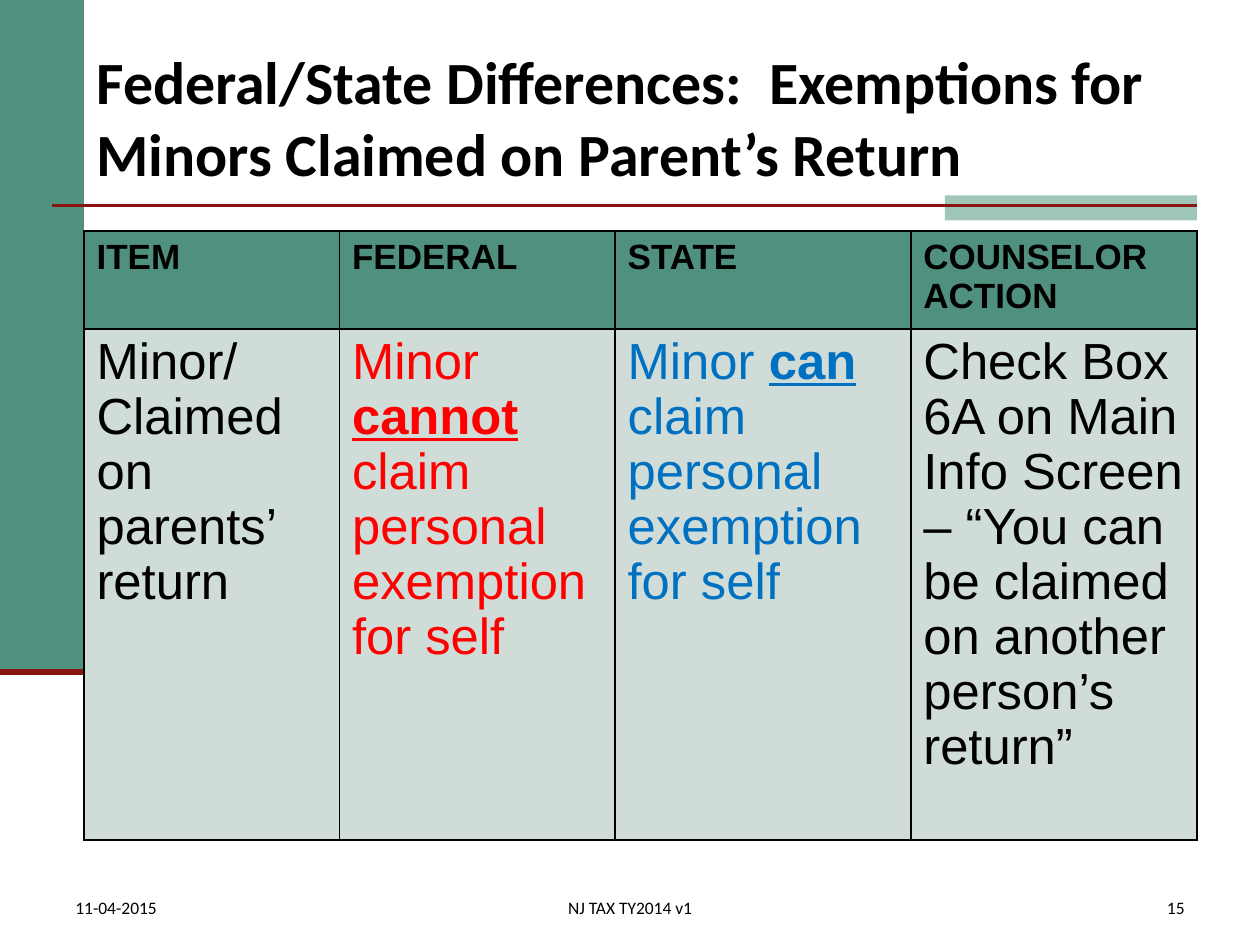
from dataclasses import dataclass

from lxml import etree
from pptx import Presentation
from pptx.dml.color import RGBColor
from pptx.enum import shapes, text
from pptx.oxml import ns
from pptx.util import Pt


@dataclass(frozen=True)
class Theme:
    green: str = "4F917E"
    mint: str = "A0C6BA"
    pale: str = "D0DCD8"
    maroon: str = "891411"
    black: str = "000000"
    red: str = "FF0000"
    blue: str = "0070C0"
    head: str = "Calibri"
    body: str = "Arial"
    title: float = 34.2
    label: float = 20
    cell: float = 29
    foot: float = 10


T = Theme()
ALIGN = text.PP_ALIGN
ANCHOR = text.MSO_ANCHOR
HEADS = ["ITEM", "FEDERAL", "STATE", "COUNSELOR ACTION"]
CLAIM = "claim personal exemption for self"
# Each cell: its colour, then paragraphs of (words, stressed) runs.
ANSWERS = [
    (T.black, [[("Minor/", False)], [("Claimed on parents’ return", False)]]),
    (T.red, [[("Minor ", False), ("cannot ", True), (CLAIM, False)]]),
    (T.blue, [[("Minor ", False), ("can ", True), (CLAIM, False)]]),
    (T.black, [[("Check Box 6A on Main Info Screen – “You can be claimed "
                 "on another person’s return”", False)]]),
]


def rgb(code):
    return RGBColor.from_string(code)


def add_run(para, words, size, face, color=T.black, bold=False, under=False):
    run = para.add_run()
    run.text = words
    font = run.font
    font.size, font.name = Pt(size), face
    font.bold, font.underline = bold, under
    font.color.rgb = rgb(color)


def place(shape, box):
    shape.left, shape.top, shape.width, shape.height = map(Pt, box)


def add_bar(slide, box, color):
    bar = slide.shapes.add_shape(shapes.MSO_SHAPE.RECTANGLE, *map(Pt, box))
    bar.shadow.inherit = False
    bar.fill.solid()
    bar.fill.fore_color.rgb = rgb(color)
    bar.line.fill.background()


def add_rule(slide, left, right, y, width):
    rule = slide.shapes.add_connector(
        shapes.MSO_CONNECTOR.STRAIGHT, Pt(left), Pt(y), Pt(right), Pt(y))
    rule.line.color.rgb = rgb(T.maroon)
    rule.line.width = Pt(width)
    etree.SubElement(rule._element.spPr, ns.qn("a:effectLst"))


def add_frame(slide, box):
    """Side band, accent bar and the two rules."""
    left, top, width, height = box
    band, end = left + 48, left + width - 36
    base = top + 384
    add_bar(slide, (left, top, 48, 384), T.green)
    add_bar(slide, (end - 144, top + 111.6, 144, 14.4), T.mint)
    add_rule(slide, left + 30, end, top + 117.6, 1.5)
    add_rule(slide, left, band, base, 3.5)


def add_title(slide, box):
    title = slide.shapes.title
    place(title, box)
    frame = title.text_frame
    frame.word_wrap = True
    frame.auto_size = text.MSO_AUTO_SIZE.NONE
    frame.vertical_anchor = ANCHOR.MIDDLE
    para = frame.paragraphs[0]
    para.alignment = ALIGN.LEFT
    add_run(para, "Federal/State Differences:  Exemptions for Minors "
            "Claimed on Parent’s Return", T.title, T.head, bold=True)


def edge_cell(cell, fill):
    """Fill a cell and draw its four borders."""
    props = cell._tc.get_or_add_tcPr()
    for side in ("lnL", "lnR", "lnT", "lnB"):
        line = etree.SubElement(props, ns.qn("a:" + side), w=str(Pt(1)))
        solid = etree.SubElement(line, ns.qn("a:solidFill"))
        etree.SubElement(solid, ns.qn("a:srgbClr"), val=T.black)
    cell.fill.solid()
    cell.fill.fore_color.rgb = rgb(fill)


def add_grid(slide, box):
    grid = slide.shapes.add_table(2, len(HEADS), *map(Pt, box)).table
    for col, width in zip(grid.columns, (146, 157.5, 169, 163.5)):
        col.width = Pt(width)
    for row, height in zip(grid.rows, (56, box[3] - 56)):
        row.height = Pt(height)
    for i, (head, (color, paras)) in enumerate(zip(HEADS, ANSWERS)):
        top, low = grid.cell(0, i), grid.cell(1, i)
        edge_cell(top, T.green)
        edge_cell(low, T.pale)
        add_run(top.text_frame.paragraphs[0], head, T.label, T.body, bold=True)
        frame = low.text_frame
        for n, runs in enumerate(paras):
            para = frame.add_paragraph() if n else frame.paragraphs[0]
            para.line_spacing = 0.97
            for words, stress in runs:
                add_run(para, words, T.cell, T.body, color, stress, stress)


def add_foot(slide, box):
    left, top, width, height = box
    parts = [
        ("11-04-2015", left, 156, ALIGN.LEFT),
        ("NJ TAX TY2014 v1", left + (width - 243) / 2, 243, ALIGN.CENTER),
        ("15", left + width - 150, 150, ALIGN.RIGHT),
    ]
    for words, x, wide, align in parts:
        note = slide.shapes.add_textbox(Pt(x), Pt(top), Pt(wide), Pt(height))
        frame = note.text_frame
        frame.word_wrap = True
        frame.vertical_anchor = ANCHOR.BOTTOM
        para = frame.paragraphs[0]
        para.alignment = align
        add_run(para, words, T.foot, T.head)


def main():
    deck = Presentation()
    deck.slide_width, deck.slide_height = Pt(720), Pt(540)
    slide = deck.slides.add_slide(deck.slide_layouts.get_by_name("Title Only"))
    add_frame(slide, (0, 0, 720, 540))
    add_title(slide, (48, 21.6, 642, 90))
    add_grid(slide, (48, 132, 636, 348))
    add_foot(slide, (36, 504, 648, 24))
    deck.save("out.pptx")


if __name__ == "__main__":
    main()
